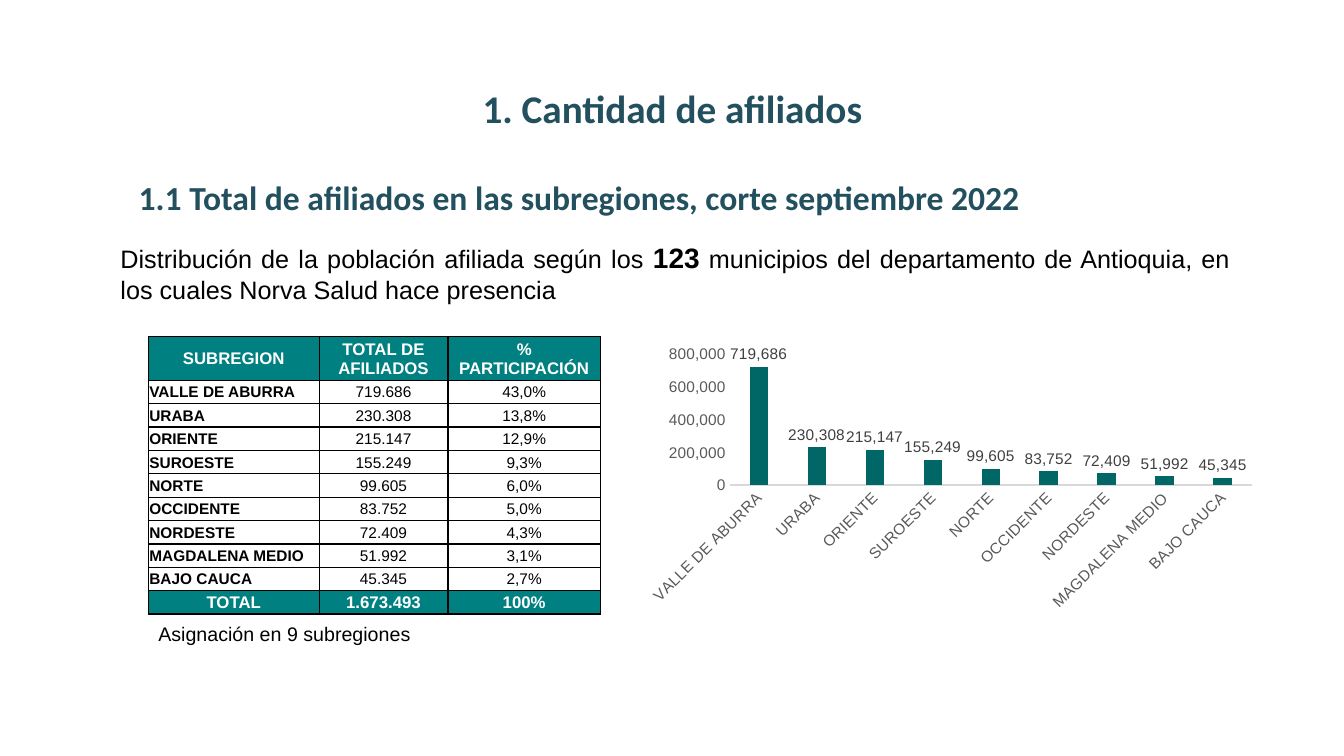
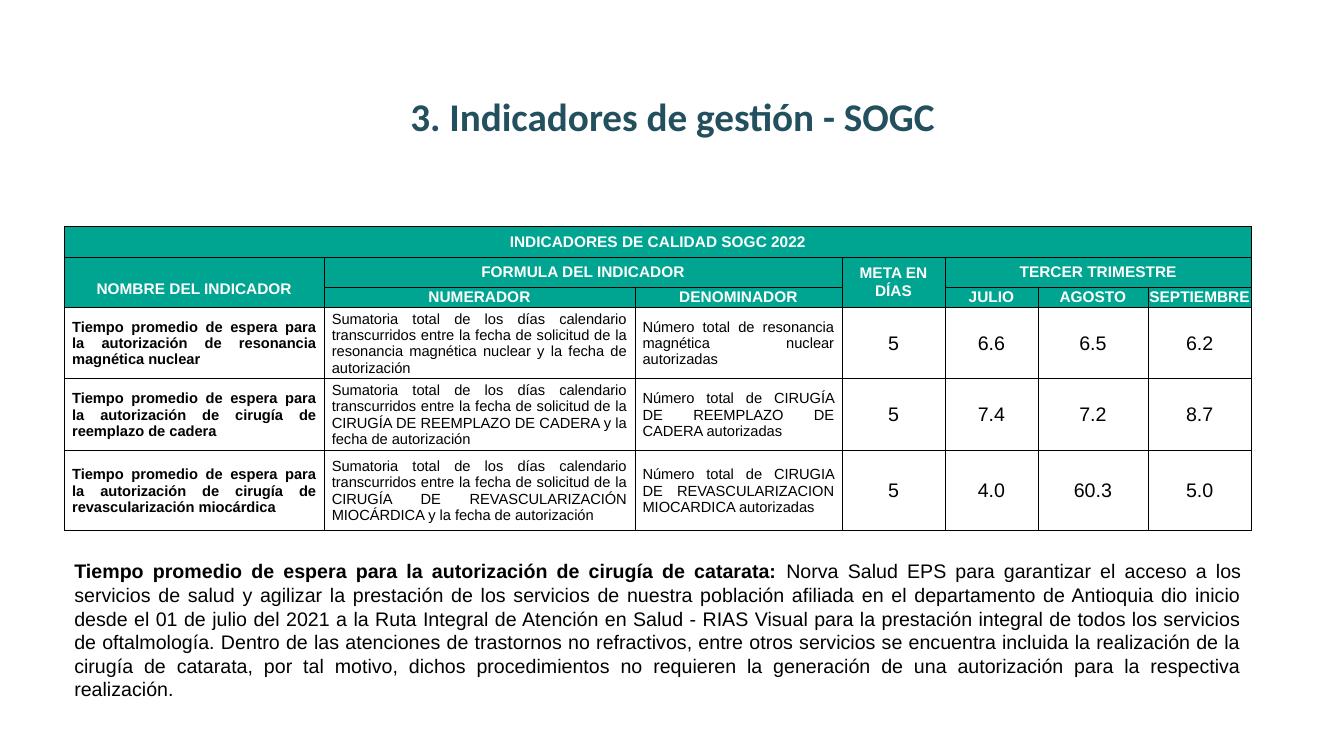
from dataclasses import dataclass, replace
from typing import NamedTuple

from lxml import etree
from pptx import Presentation
from pptx.chart.data import CategoryChartData
from pptx.dml.color import RGBColor
from pptx.enum.chart import XL_CHART_TYPE, XL_LABEL_POSITION, XL_TICK_MARK
from pptx.enum.text import MSO_ANCHOR, PP_ALIGN
from pptx.oxml.ns import qn
from pptx.util import Pt

LEFT, MID, JUST = PP_ALIGN.LEFT, PP_ALIGN.CENTER, PP_ALIGN.JUSTIFY
MIDDLE = MSO_ANCHOR.MIDDLE
COLUMN = XL_CHART_TYPE.COLUMN_CLUSTERED
ABOVE = XL_LABEL_POSITION.OUTSIDE_END
NO_TICK = XL_TICK_MARK.NONE


@dataclass(frozen=True)
class Theme:
    body: str = "Arial"
    head: str = "Calibri"
    title: str = "23505E"
    ink: str = "000000"
    white: str = "FFFFFF"
    teal: str = "008080"
    green: str = "00A592"
    bar: str = "006666"
    label: str = "404040"
    axis: str = "595959"
    rule: str = "D9D9D9"
    title_size: float = 28
    sub_size: float = 24
    big_size: float = 20
    text_size: float = 18
    note_size: float = 14
    head_size: float = 12
    cell_size: float = 11
    small_size: float = 10.5


THEME = Theme()


class Rect(NamedTuple):
    left: float
    top: float
    width: float
    height: float


class Run(NamedTuple):
    text: str
    size: float
    bold: bool = False
    color: str = THEME.ink
    font: str = THEME.body


class Pad(NamedTuple):
    left: float
    top: float
    right: float
    bottom: float


TIGHT = Pad(0.7, 0.7, 0.7, 0)
WIDE = Pad(8, 4, 8, 4)
SIDE = Pad(5.5, 0.7, 5.5, 0)


@dataclass(frozen=True)
class Look:
    size: float
    bold: bool = False
    color: str = THEME.ink
    align: PP_ALIGN = MID
    pad: Pad = TIGHT
    fill: str | None = None


@dataclass(frozen=True)
class Cell:
    text: str
    look: Look
    rows: int = 1
    cols: int = 1


class Region(NamedTuple):
    name: str
    count: int
    share: str


class Index(NamedTuple):
    name: str
    upper: str
    lower: str
    goal: str
    months: tuple[str, str, str]


REGIONS = [
    Region("VALLE DE ABURRA", 719686, "43,0%"),
    Region("URABA", 230308, "13,8%"),
    Region("ORIENTE", 215147, "12,9%"),
    Region("SUROESTE", 155249, "9,3%"),
    Region("NORTE", 99605, "6,0%"),
    Region("OCCIDENTE", 83752, "5,0%"),
    Region("NORDESTE", 72409, "4,3%"),
    Region("MAGDALENA MEDIO", 51992, "3,1%"),
    Region("BAJO CAUCA", 45345, "2,7%"),
]

WAIT = "Tiempo promedio de espera para la autorización de "
DAYS = "Sumatoria total de los días calendario transcurridos entre la fecha de solicitud de la "
UNTIL = " y la fecha de autorización"

INDEXES = [
    Index(WAIT + "resonancia magnética nuclear",
          DAYS + "resonancia magnética nuclear" + UNTIL,
          "Número total de resonancia magnética nuclear autorizadas",
          "5", ("6.6", "6.5", "6.2")),
    Index(WAIT + "cirugía de reemplazo de cadera",
          DAYS + "CIRUGÍA DE REEMPLAZO DE CADERA" + UNTIL,
          "Número total de CIRUGÍA DE REEMPLAZO DE CADERA autorizadas",
          "5", ("7.4", "7.2", "8.7")),
    Index(WAIT + "cirugía de revascularización miocárdica",
          DAYS + "CIRUGÍA DE REVASCULARIZACIÓN MIOCÁRDICA" + UNTIL,
          "Número total de CIRUGIA DE REVASCULARIZACION MIOCARDICA autorizadas",
          "5", ("4.0", "60.3", "5.0")),
]


def style(font, *, size: float, color: str, bold: bool = False, face: str = THEME.body) -> None:
    font.name, font.size, font.bold = face, Pt(size), bold
    font.color.rgb = RGBColor.from_string(color)


def put(para, text: str, *, align: PP_ALIGN = LEFT, **fmt) -> None:
    """Add one formatted run to a paragraph."""
    para.alignment = align
    run = para.add_run()
    run.text = text
    style(run.font, **fmt)


def box(slide, rect: Rect, *runs: Run, align: PP_ALIGN = LEFT) -> None:
    frame = slide.shapes.add_textbox(*map(Pt, rect)).text_frame
    frame.word_wrap = True
    for run in runs:
        put(frame.paragraphs[0], run.text, align=align, size=run.size,
            bold=run.bold, color=run.color, face=run.font)


def title(slide, top: float, text: str) -> None:
    box(slide, Rect(191.5, top, 577.5, 41),
        Run(text, THEME.title_size, True, THEME.title, THEME.head), align=MID)


def edge(cell, width: float) -> None:
    """Draw the four borders of a cell."""
    props = cell._tc.get_or_add_tcPr()
    for tag in ("a:lnL", "a:lnR", "a:lnT", "a:lnB"):
        line = etree.SubElement(props, qn(tag), w=str(Pt(width)))
        fill = etree.SubElement(line, qn("a:solidFill"))
        etree.SubElement(fill, qn("a:srgbClr"), val=THEME.ink)


def paint(cell, look: Look) -> None:
    if look.fill:
        cell.fill.solid()
        cell.fill.fore_color.rgb = RGBColor.from_string(look.fill)
    else:
        cell.fill.background()
    cell.vertical_anchor = MIDDLE
    cell.margin_left, cell.margin_top, cell.margin_right, cell.margin_bottom = map(Pt, look.pad)


def grid(slide, left: float, top: float, widths: list[float], heights: list[float],
         rows: list[list[Cell | None]], line: float) -> None:
    """Draw a table; None marks a place covered by a merged cell."""
    rect = Rect(left, top, sum(widths), sum(heights))
    table = slide.shapes.add_table(len(heights), len(widths), *map(Pt, rect)).table
    table.first_row = table.horz_banding = False
    for col, width in zip(table.columns, widths):
        col.width = Pt(width)
    for row, height in zip(table.rows, heights):
        row.height = Pt(height)
    for r, row in enumerate(rows):
        for c, item in enumerate(row):
            cell = table.cell(r, c)
            edge(cell, line)
            if item is None:
                continue
            look = item.look
            paint(cell, look)
            if item.rows * item.cols > 1:
                cell.merge(table.cell(r + item.rows - 1, c + item.cols - 1))
            frame = cell.text_frame
            for n, text in enumerate(item.text.split("\n")):
                para = frame.add_paragraph() if n else frame.paragraphs[0]
                put(para, text, align=look.align, size=look.size,
                    bold=look.bold, color=look.color)


def bars(slide, rect: Rect) -> None:
    data = CategoryChartData(number_format="#,##0")
    data.categories = [region.name for region in REGIONS]
    data.add_series("Series 1", [region.count for region in REGIONS])
    chart = slide.shapes.add_chart(COLUMN, *map(Pt, rect), data).chart
    chart.has_legend = chart.has_title = False
    style(chart.font, size=THEME.cell_size, color=THEME.ink)

    for axis in (chart.category_axis, chart.value_axis):
        axis.major_tick_mark = axis.minor_tick_mark = NO_TICK
        axis.has_major_gridlines = False
        style(axis.tick_labels.font, size=THEME.cell_size, color=THEME.axis)
    names, scale = chart.category_axis, chart.value_axis
    names.format.line.width = Pt(0.75)
    names.format.line.color.rgb = RGBColor.from_string(THEME.rule)
    slant = names._element.find(qn("c:txPr")).find(qn("a:bodyPr"))
    slant.set("rot", "-2700000")
    slant.set("vert", "horz")
    scale.format.line.fill.background()
    scale.minimum_scale, scale.maximum_scale, scale.major_unit = 0, 800000, 200000
    scale.tick_labels.number_format = "#,##0"
    scale.tick_labels.number_format_is_linked = False

    plot = chart.plots[0]
    plot.gap_width, plot.overlap, plot.vary_by_categories = 219, -27, False
    series = plot.series[0]
    series.invert_if_negative = False
    series.format.fill.solid()
    series.format.fill.fore_color.rgb = RGBColor.from_string(THEME.bar)
    labels = series.data_labels
    labels.show_value, labels.position = True, ABOVE
    labels.number_format, labels.number_format_is_linked = "#,##0", False
    style(labels.font, size=THEME.cell_size, color=THEME.label)


def members(slide) -> None:
    """Build the slide of members by region."""
    title(slide, 57, "1. Cantidad de afiliados")
    box(slide, Rect(92, 123, 699, 36),
        Run("1.1 Total de afiliados en las subregiones, corte septiembre 2022",
            THEME.sub_size, True, THEME.title, THEME.head))
    box(slide, Rect(79, 168.5, 806.5, 53),
        Run("Distribución de la población afiliada según los ", THEME.text_size),
        Run("123", THEME.big_size, True),
        Run(" municipios del departamento de Antioquia, en los cuales Norva Salud hace presencia",
            THEME.text_size), align=JUST)

    head = Look(THEME.head_size, True, THEME.white, fill=THEME.teal)
    value = Look(THEME.cell_size)
    name = replace(value, bold=True, align=LEFT)

    def dots(count: int) -> str:
        return f"{count:,}".replace(",", ".")

    total = sum(region.count for region in REGIONS)
    rows = [[Cell(text, head) for text in
             ("SUBREGION", "TOTAL DE AFILIADOS", "%\nPARTICIPACIÓN")]]
    rows += [[Cell(region.name, name), Cell(dots(region.count), value),
              Cell(region.share, value)] for region in REGIONS]
    rows.append([Cell(text, head) for text in ("TOTAL", dots(total), "100%")])
    grid(slide, 106, 240.5, [122, 92, 109], [31.2] + [16.7] * 10, rows, 1)
    box(slide, Rect(106, 440.5, 291.5, 24.5),
        Run("Asignación en 9 subregiones", THEME.note_size))
    bars(slide, Rect(455, 242.5, 448, 198))


def quality(slide) -> None:
    """Build the slide of waiting times."""
    title(slide, 62.5, "3. Indicadores de gestión - SOGC")
    head = Look(THEME.cell_size, True, THEME.white, pad=WIDE, fill=THEME.green)
    low = replace(head, pad=Pad(8, 14, 8, 4))
    sub = replace(head, pad=TIGHT)
    text = Look(THEME.small_size, align=JUST, pad=SIDE)
    name = replace(text, bold=True)
    value = Look(THEME.note_size)

    rows = [
        [Cell("INDICADORES DE CALIDAD SOGC 2022", head, cols=7)] + [None] * 6,
        [Cell("NOMBRE DEL INDICADOR", low, rows=2),
         Cell("FORMULA DEL INDICADOR", head, cols=2), None,
         Cell("META EN DÍAS", head, rows=2),
         Cell("TERCER TRIMESTRE", head, cols=3), None, None],
        [None, Cell("NUMERADOR", sub), Cell("DENOMINADOR", sub), None,
         *(Cell(month, sub) for month in ("JULIO", "AGOSTO", "SEPTIEMBRE"))],
    ]
    rows += [[Cell(index.name, name), Cell(index.upper, text), Cell(index.lower, text),
              *(Cell(mark, value) for mark in (index.goal, *index.months))]
             for index in INDEXES]
    grid(slide, 46, 162, [185.5, 222, 148, 73.5, 66.5, 78.5, 74],
         [21.5, 21.5, 14.5, 51, 51, 57.5], rows, 0.5)
    box(slide, Rect(46, 396, 848, 109),
        Run(WAIT + "cirugía de catarata: ", THEME.note_size, True),
        Run("Norva Salud EPS para garantizar el acceso a los servicios de salud y agilizar la "
            "prestación de los servicios de nuestra población afiliada en el departamento de "
            "Antioquia dio inicio desde el 01 de julio del 2021 a la Ruta Integral de Atención "
            "en Salud - RIAS Visual para la prestación integral de todos los servicios de "
            "oftalmología. Dentro de las atenciones de trastornos no refractivos, entre otros "
            "servicios se encuentra incluida la realización de la cirugía de catarata, por tal "
            "motivo, dichos procedimientos no requieren la generación de una autorización para "
            "la respectiva realización.", THEME.note_size), align=JUST)


def main() -> None:
    deck = Presentation()
    deck.slide_width, deck.slide_height = Pt(960), Pt(540)
    for build in (members, quality):
        build(deck.slides.add_slide(deck.slide_layouts[6]))
    deck.save("out.pptx")


if __name__ == "__main__":
    main()
